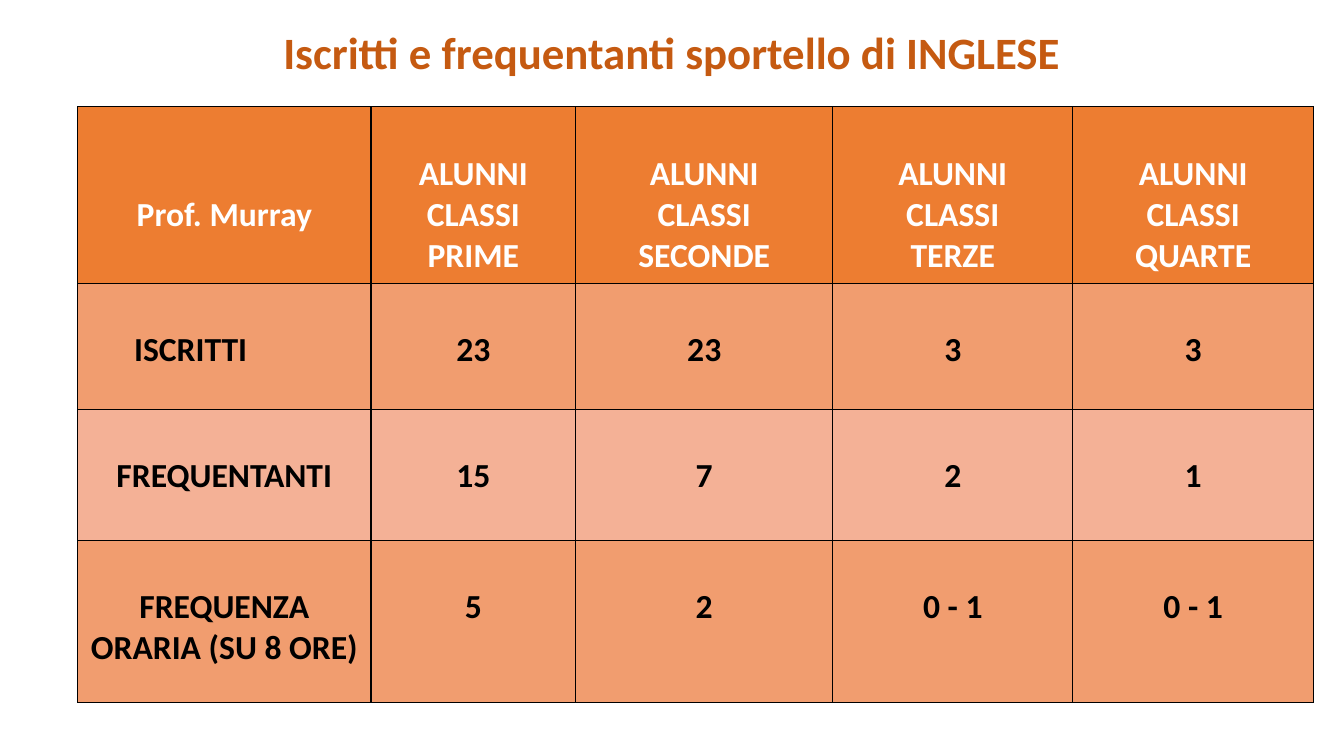
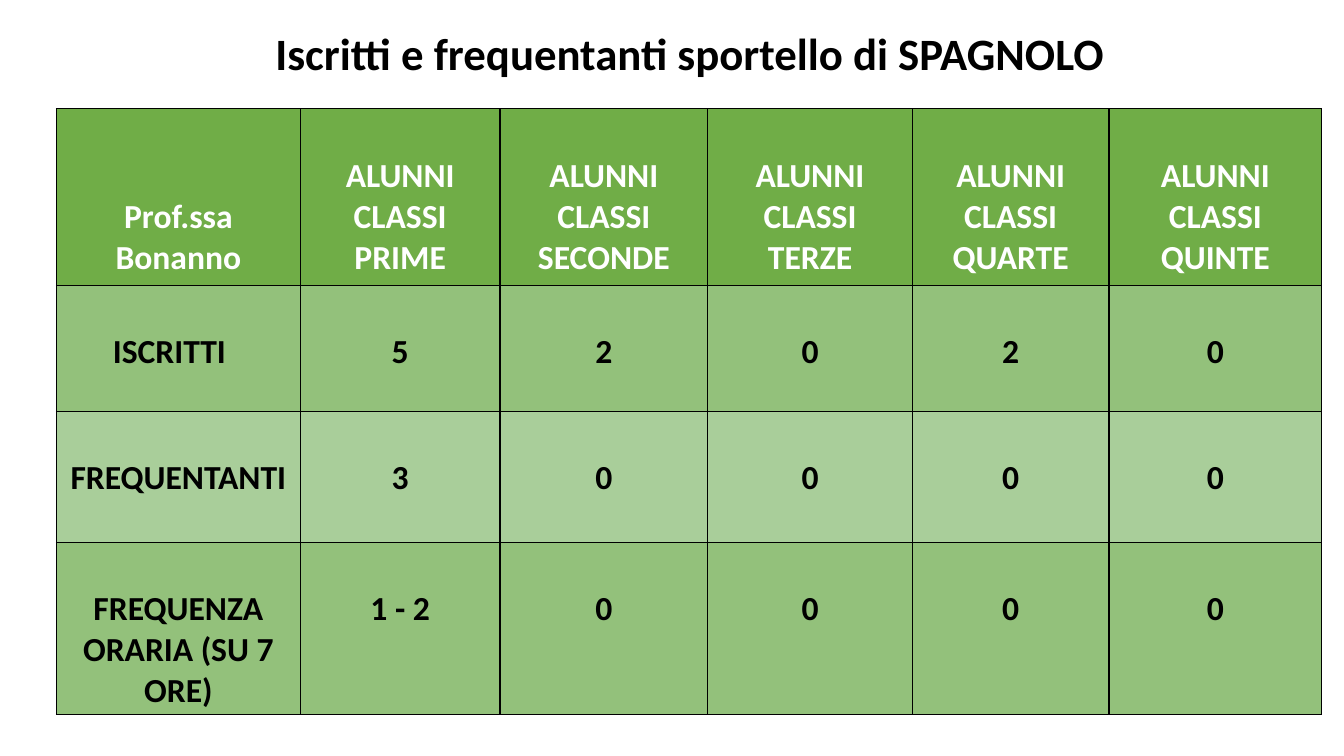
from lxml import etree
from pptx import Presentation
from pptx.dml.color import RGBColor
from pptx.enum.text import PP_ALIGN
from pptx.oxml.ns import qn
from pptx.util import Inches, Pt

LEFT, CENTER = PP_ALIGN.LEFT, PP_ALIGN.CENTER
FONT = "Calibri"
BLACK = RGBColor(0x00, 0x00, 0x00)
WHITE = RGBColor(0xFF, 0xFF, 0xFF)
RUST = RGBColor(0xC5, 0x5A, 0x11)
ORANGE = RGBColor(0xED, 0x7D, 0x31)
ORANGE_MID = RGBColor(0xF1, 0x9D, 0x6F)
ORANGE_PALE = RGBColor(0xF4, 0xB1, 0x96)
GREEN = RGBColor(0x70, 0xAD, 0x47)
GREEN_MID = RGBColor(0x93, 0xC1, 0x7B)
GREEN_PALE = RGBColor(0xA9, 0xCE, 0x9A)

ROW_HEIGHTS = [1.75, 1.25, 1.3, 1.61]
CELL_MARGIN = 0.05
LINE_HEIGHT = 0.41
ENROLLED_INDENT = 0.56

SUBJECTS = [
    {
        "title": "Iscritti e frequentanti sportello di INGLESE",
        "title_color": RUST,
        "title_at": (0.31, 0.2),
        "table_at": (0.77, 1.06),
        "widths": [2.91, 2.03, 2.55, 2.38, 2.39],
        "fills": [ORANGE, ORANGE_MID, ORANGE_PALE, ORANGE_MID],
        "teacher": "Prof. Murray",
        "classes": ["PRIME", "SECONDE", "TERZE", "QUARTE"],
        "rows": [
            ["ISCRITTI", "23", "23", "3", "3"],
            ["FREQUENTANTI", "15", "7", "2", "1"],
            ["FREQUENZA\nORARIA (SU 8 ORE)", "5", "2", "0 - 1", "0 - 1"],
        ],
    },
    {
        "title": "Iscritti e frequentanti sportello di SPAGNOLO",
        "title_color": BLACK,
        "title_at": (0.49, 0.21),
        "table_at": (0.56, 1.08),
        "widths": [2.42, 1.98, 2.06, 2.03, 1.95, 2.11],
        "fills": [GREEN, GREEN_MID, GREEN_PALE, GREEN_MID],
        "teacher": "Prof.ssa Bonanno",
        "classes": ["PRIME", "SECONDE", "TERZE", "QUARTE", "QUINTE"],
        "rows": [
            ["ISCRITTI", "5", "2", "0", "2", "0"],
            ["FREQUENTANTI", "3", "0", "0", "0", "0"],
            ["FREQUENZA\nORARIA (SU 7 ORE)", "1 - 2", "0", "0", "0", "0"],
        ],
    },
]


def style_text(frame, size, color, align=CENTER):
    for para in frame.paragraphs:
        para.alignment = align
        para.font.name = FONT
        para.font.size = Pt(size)
        para.font.bold = True
        para.font.color.rgb = color


def add_borders(cell):
    """Draw a black 1 pt line on all four sides; lines must precede the fill."""
    properties = cell._tc.get_or_add_tcPr()
    for index, side in enumerate(("a:lnL", "a:lnR", "a:lnT", "a:lnB")):
        line = etree.Element(qn(side), w=str(Pt(1)))
        fill = etree.SubElement(line, qn("a:solidFill"))
        etree.SubElement(fill, qn("a:srgbClr"), val=str(BLACK))
        properties.insert(index, line)


def add_title(page, subject):
    left, top = subject["title_at"]
    box = page.shapes.add_textbox(Inches(left), Inches(top), Inches(12.71), Inches(0.64))
    box.text_frame.word_wrap = True
    box.text_frame.text = subject["title"]
    style_text(box.text_frame, 32, subject["title_color"])


def add_attendance_table(page, subject):
    header = [subject["teacher"]] + [f"ALUNNI\nCLASSI\n{name}" for name in subject["classes"]]
    rows = [header] + subject["rows"]
    widths = subject["widths"]
    left, top = subject["table_at"]
    table = page.shapes.add_table(
        len(rows), len(widths), Inches(left), Inches(top),
        Inches(sum(widths)), Inches(sum(ROW_HEIGHTS))).table
    table.horz_banding = False
    for column, width in zip(table.columns, widths):
        column.width = Inches(width)
    for r, (texts, height, fill) in enumerate(zip(rows, ROW_HEIGHTS, subject["fills"])):
        table.rows[r].height = Inches(height)
        for c, text in enumerate(texts):
            cell = table.cell(r, c)
            is_teacher = r == 0 and c == 0
            is_enrolled = r == 1 and c == 0
            lines_above = 2 if is_teacher else 1
            cell.text = text
            cell.margin_top = Inches(CELL_MARGIN + lines_above * LINE_HEIGHT)
            if is_enrolled:
                cell.margin_left = Inches(ENROLLED_INDENT)
            style_text(cell.text_frame, 24, BLACK if r else WHITE,
                       LEFT if is_enrolled else CENTER)
            cell.fill.solid()
            cell.fill.fore_color.rgb = fill
            add_borders(cell)


def main():
    deck = Presentation()
    deck.slide_width, deck.slide_height = Inches(13.33), Inches(7.5)
    for subject in SUBJECTS:
        page = deck.slides.add_slide(deck.slide_layouts[6])
        add_attendance_table(page, subject)
        add_title(page, subject)
    deck.save("out.pptx")


if __name__ == "__main__":
    main()
